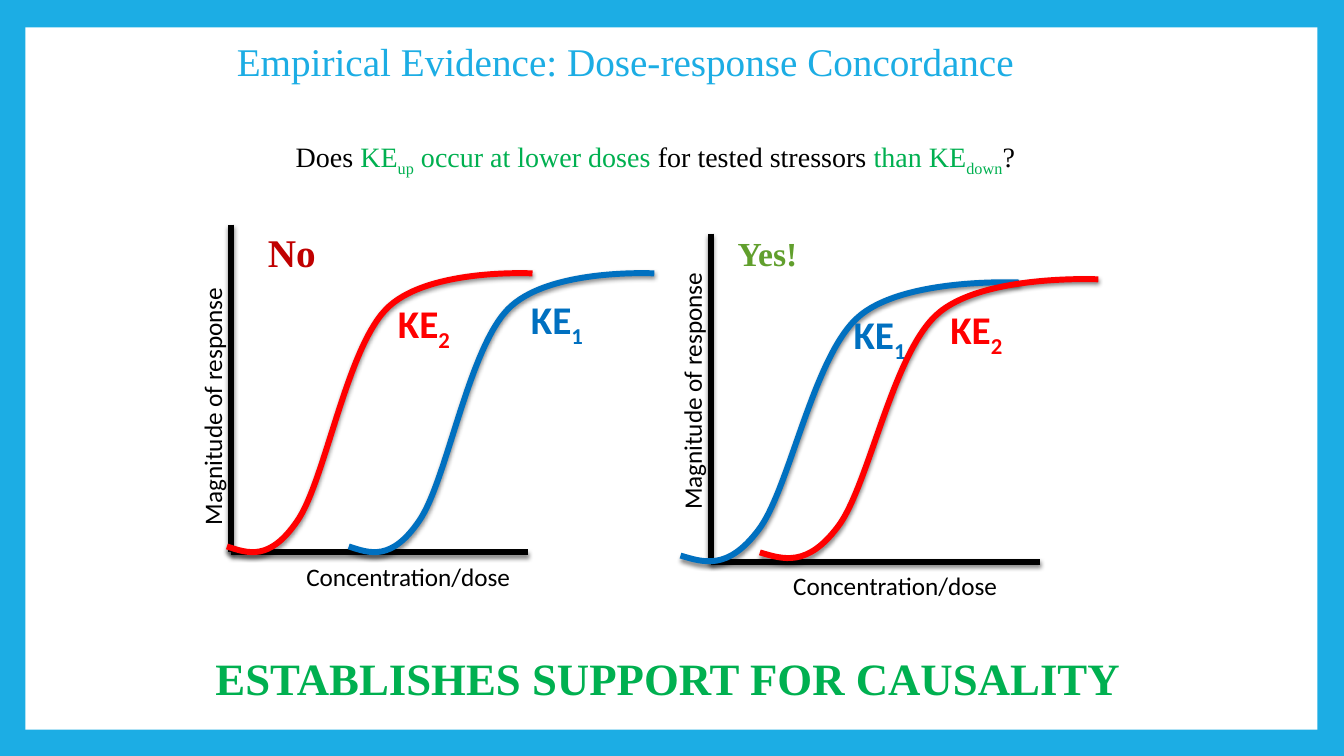
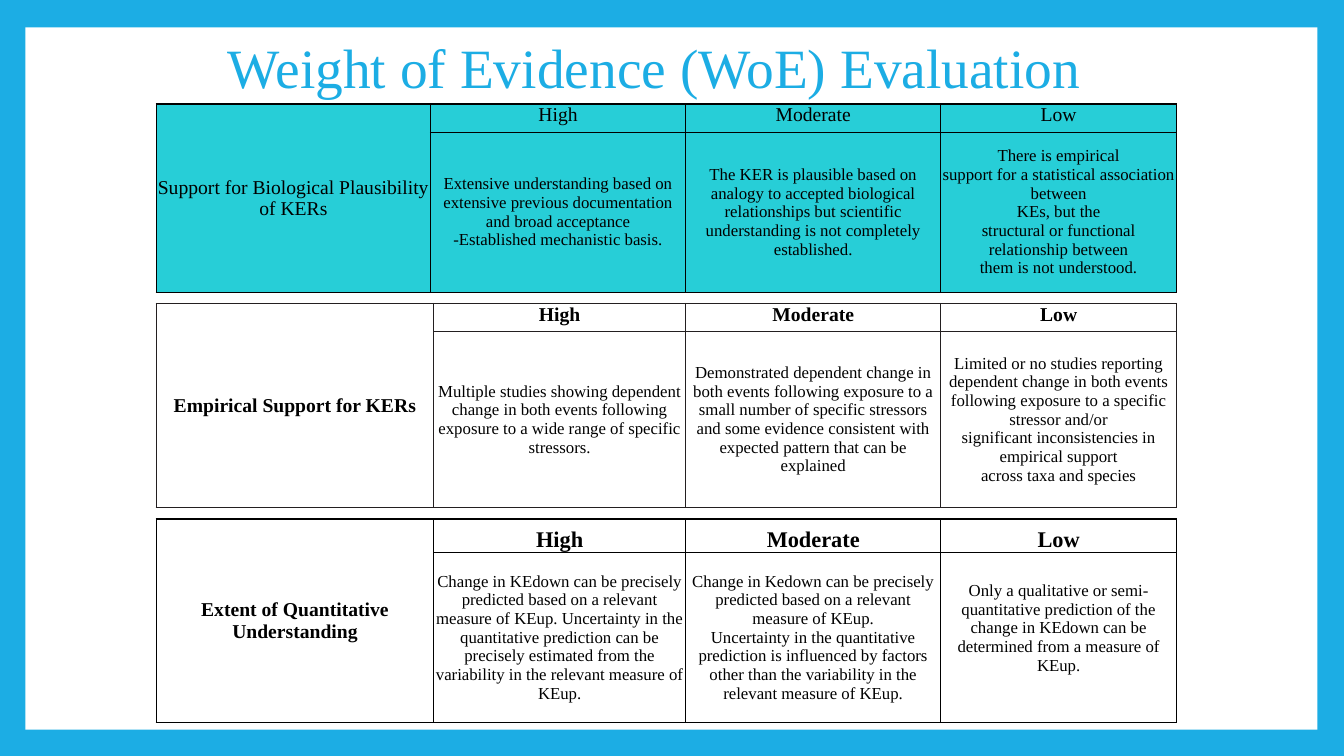
"""Build two slides on weighing evidence for key event relationships."""
from lxml import etree
from pptx import Presentation
from pptx.dml.color import RGBColor
from pptx.enum.shapes import MSO_CONNECTOR, MSO_SHAPE
from pptx.enum.text import MSO_ANCHOR, PP_ALIGN
from pptx.oxml import parse_xml
from pptx.oxml.ns import nsdecls, qn
from pptx.util import Cm, Pt

RECTANGLE = MSO_SHAPE.RECTANGLE
STRAIGHT = MSO_CONNECTOR.STRAIGHT
TOP, MIDDLE, BOTTOM = MSO_ANCHOR.TOP, MSO_ANCHOR.MIDDLE, MSO_ANCHOR.BOTTOM
LEFT, CENTER = PP_ALIGN.LEFT, PP_ALIGN.CENTER

COLORS = {
    "frame": "1CADE4", "panel": "FFFFFF", "ink": "000000", "green": "00B050",
    "no": "C00000", "yes": "619F2D", "blue": "0070C0", "red": "FF0000",
    "teal": "27CED7", "charcoal": "231F20",
}
SERIF, SANS = "Times New Roman", "Calibri"
AXIS_HEIGHT = 8.26
STROKE = 4.25
SIGMOID = [
    (0.07, 0.18), (0.14, 0.37), (0.23, -0.64),
    (0.32, -1.63), (0.39, -4.93), (0.52, -5.97),
    (0.65, -7.02), (1, -6.88), (1, -6.88),
]


class Deck:
    """Hold the shared style and the slide being filled."""

    def __init__(self):
        """Start a widescreen deck with a coloured frame."""
        self.prs = Presentation()
        self.prs.slide_width, self.prs.slide_height = Cm(33.87), Cm(19.05)
        backdrop = self.prs.slide_master.background.fill
        backdrop.solid()
        backdrop.fore_color.rgb = self.color("frame")
        self.slide = None
        self.canvas = None

    @staticmethod
    def color(name):
        """Look up a named colour."""
        return RGBColor.from_string(COLORS[name])

    def new_slide(self, title, box, size):
        """Add a slide with the white panel and its title."""
        self.slide = self.prs.slides.add_slide(self.prs.slide_layouts[6])
        self.canvas = self.slide.shapes
        panel = self.canvas.add_shape(RECTANGLE, Cm(0.64), Cm(0.69), Cm(32.56), Cm(17.7))
        panel.shadow.inherit = False
        panel.fill.solid()
        panel.fill.fore_color.rgb = self.color("panel")
        panel.line.fill.background()
        heading = self.text(box, [(title, "frame")], size, anchor=MIDDLE)
        heading.text_frame.paragraphs[0].line_spacing = 0.9

    def add_runs(self, paragraph, runs, size, font=SERIF, bold=False, align=LEFT):
        """Fill a paragraph with (text, colour, optional baseline) runs."""
        paragraph.alignment = align
        for words, color, *baseline in runs:
            run = paragraph.add_run()
            run.text = words
            run.font.name, run.font.size, run.font.bold = font, Pt(size), bold
            run.font.color.rgb = self.color(color)
            if baseline:
                run.font._element.set("baseline", str(baseline[0] * 1000))

    def text(self, box, runs, size, anchor=TOP, wrap=True, turn=0, **style):
        """Add a one-paragraph text box."""
        label = self.canvas.add_textbox(*map(Cm, box))
        label.rotation = turn
        frame = label.text_frame
        frame.word_wrap, frame.vertical_anchor = wrap, anchor
        self.add_runs(frame.paragraphs[0], runs, size, **style)
        return label

    def stroke(self, mark, color):
        """Give a line or curve its thick outline and soft shadow."""
        mark.line.color.rgb = self.color(color)
        mark.line.width = Pt(STROKE)
        mark._element.spPr.append(parse_xml(
            f'<a:effectLst {nsdecls("a")}><a:outerShdw blurRad="{Pt(3)}" dist="{Pt(2)}" '
            f'dir="5400000" rotWithShape="0"><a:srgbClr val="{COLORS["ink"]}">'
            '<a:alpha val="45000"/></a:srgbClr></a:outerShdw></a:effectLst>'))

    def axis(self, start, end):
        """Draw one plot axis."""
        self.stroke(self.canvas.add_connector(STRAIGHT, *map(Cm, start + end)), "ink")

    def curve(self, x, y, width, color):
        """Draw a smooth dose-response curve rising from a start point."""
        builder = self.canvas.build_freeform(Cm(x), Cm(y))
        builder.add_line_segments(
            [(Cm(x + part * width), Cm(y + rise)) for part, rise in SIGMOID], close=False)
        response = builder.convert_to_shape()
        outline = response._element.spPr.find(".//" + qn("a:path"))
        stops = outline.findall(qn("a:lnTo"))
        for first in range(0, len(stops), 3):
            bend = etree.SubElement(outline, qn("a:cubicBezTo"))
            for stop in stops[first:first + 3]:
                bend.append(stop[0])
                outline.remove(stop)
        response.fill.background()
        self.stroke(response, color)

    def plot(self, origin, axis_width, curve_width, x_label, y_label, verdict, events):
        """Draw a grouped dose-response plot; offsets are from its origin."""
        x, y = origin
        self.canvas = self.slide.shapes.add_group_shape().shapes
        self.axis((x, y - AXIS_HEIGHT), origin)
        self.axis((x + axis_width, y), origin)
        self.text((x + x_label, y + 0.1, 6.35, 1.02),
                  [("Concentration/dose", "ink")], 18, font=SANS)
        self.text((x - 3.97, y - y_label - 0.51, 7, 1.02),
                  [("Magnitude of response", "ink")], 18, font=SANS, turn=270)
        for number, color, (start_x, start_y), (label_x, label_y) in events:
            self.curve(x + start_x, y + start_y, curve_width, color)
            self.text((x + label_x, y + label_y, 2.57, 1.45),
                      [("KE", color), (number, color, -25)], 28, font=SANS, bold=True)
        words, color, size, (verdict_x, verdict_y) = verdict
        self.text((x + verdict_x, y + verdict_y, 3.05, 1.45), [(words, color)], size, bold=True)
        self.canvas = self.slide.shapes

    def cell(self, cell, paragraphs, size, bold, anchor, fill, border, bottom=0):
        """Style one table cell and fill in its paragraphs."""
        cell.margin_left = cell.margin_right = cell.margin_top = 0
        cell.margin_bottom = Cm(bottom)
        cell.vertical_anchor = anchor
        properties = cell._tc.get_or_add_tcPr()
        for side in "LRTB":
            properties.append(parse_xml(
                f'<a:ln{side} {nsdecls("a")} w="{Pt(1)}"><a:solidFill>'
                f'<a:srgbClr val="{COLORS[border]}"/></a:solidFill></a:ln{side}>'))
        if fill:
            cell.fill.solid()
            cell.fill.fore_color.rgb = self.color(fill)
        else:
            cell.fill.background()
        frame = cell.text_frame
        for index, words in enumerate(paragraphs):
            paragraph = frame.add_paragraph() if index else frame.paragraphs[0]
            self.add_runs(paragraph, [(words, "ink")], size, bold=bold, align=CENTER)

    def criterion(self, top, widths, heights, name, levels, bold=True, head_size=14,
                  head_anchor=TOP, fill=None, border="ink", last_bottom=0):
        """Add a table rating one criterion as high, moderate or low."""
        table = self.canvas.add_table(
            2, 4, Cm(3.94), Cm(top), Cm(sum(widths)), Cm(sum(heights))).table
        table.first_row = table.horz_banding = False
        for column, width in zip(table.columns, widths):
            column.width = Cm(width)
        for row, height in zip(table.rows, heights):
            row.height = Cm(height)
        look = {"fill": fill, "border": border}
        self.cell(table.cell(0, 0), [name], 14, bold, MIDDLE, **look)
        self.cell(table.cell(1, 0), [], 12, False, MIDDLE, **look)
        table.cell(0, 0).merge(table.cell(1, 0))
        for column, (level, meaning) in enumerate(zip(("High", "Moderate", "Low"), levels), 1):
            self.cell(table.cell(0, column), [level], head_size, bold, head_anchor, **look)
            self.cell(table.cell(1, column), meaning, 12, False, MIDDLE,
                      bottom=last_bottom if column == 3 else 0, **look)


def dose_response(deck):
    """Build the dose-response concordance slide."""
    deck.new_slide("Empirical Evidence: Dose-response Concordance", (5.72, 0.43, 23.93, 2.34), 28)
    deck.text((5.72, 3.38, 21.59, 1.12), [
        ("Does ", "ink"), ("KE", "green"), ("up", "green", -25),
        (" occur at lower doses ", "green"), ("for tested stressors ", "ink"),
        ("than KE", "green"), ("down", "green", -25), ("?", "ink"),
    ], 20, align=CENTER)
    deck.plot((17.91, 14.15), 8.3, 8.53, 1.83, 4.55, ("Yes!", "yes", 24, (0.43, -8.41)), [
        ("1", "blue", (-0.76, -0.15), (3.35, -6.45)),
        ("2", "red", (1.24, -0.23), (5.79, -6.58)),
    ])
    deck.plot((5.82, 13.92), 7.49, 7.7, 1.65, 3.94, ("No", "no", 28, (0.68, -8.28)), [
        ("1", "blue", (2.97, -0.15), (7.31, -6.6)),
        ("2", "red", (-0.1, -0.15), (3.96, -6.5)),
    ])
    deck.text((5.18, 16.26, 23.52, 1.63), [("ESTABLISHES SUPPORT FOR CAUSALITY", "green")],
              32, wrap=False, bold=True)


def weight_of_evidence(deck):
    """Build the weight of evidence slide."""
    deck.new_slide("Weight of Evidence (WoE) Evaluation", (5.49, 0.18, 24.13, 3.18), 39.6)
    deck.criterion(
        2.62, (6.91, 6.43, 6.43, 5.94), (0.71, 4.04),
        "Support for Biological Plausibility of KERs", [
            ["Extensive understanding based on extensive previous documentation "
             "and broad acceptance",
             "-Established mechanistic basis."],
            ["The KER is plausible based on analogy to accepted biological relationships "
             "but scientific understanding is not completely established."],
            ["There is empirical",
             "support for a statistical association between",
             "KEs, but the",
             "structural or functional relationship between",
             "them is not understood."],
        ], bold=False, fill="teal")
    widths = (6.99, 6.35, 6.43, 5.94)
    deck.criterion(
        7.65, widths, (0.71, 4.42), "Empirical Support for KERs", [
            ["Multiple studies showing dependent change in both events following exposure "
             "to a wide range of specific stressors."],
            ["Demonstrated dependent change in both events following exposure to a small "
             "number of specific stressors and some evidence consistent with expected "
             "pattern that can be",
             "explained"],
            ["Limited or no studies reporting dependent change in both events",
             "following exposure to a specific stressor and/or",
             "significant inconsistencies in empirical support",
             "across taxa and species"],
        ], border="charcoal")
    deck.criterion(
        13.08, widths, (0.84, 4.29), "Extent of Quantitative Understanding", [
            ["Change in KEdown can be precisely predicted based on a relevant measure of KEup. "
             "Uncertainty in the quantitative prediction can be precisely estimated from the "
             "variability in the relevant measure of KEup."],
            ["Change in Kedown can be precisely predicted based on a relevant measure of KEup.",
             "Uncertainty in the quantitative prediction is influenced by factors other than "
             "the variability in the relevant measure of KEup."],
            ["Only a qualitative or semi-quantitative prediction of the change in KEdown can be "
             "determined from a measure of KEup."],
        ], head_size=16, head_anchor=BOTTOM, last_bottom=0.47)


def main():
    """Build and save the deck."""
    deck = Deck()
    dose_response(deck)
    weight_of_evidence(deck)
    deck.prs.save("out.pptx")


if __name__ == "__main__":
    main()
